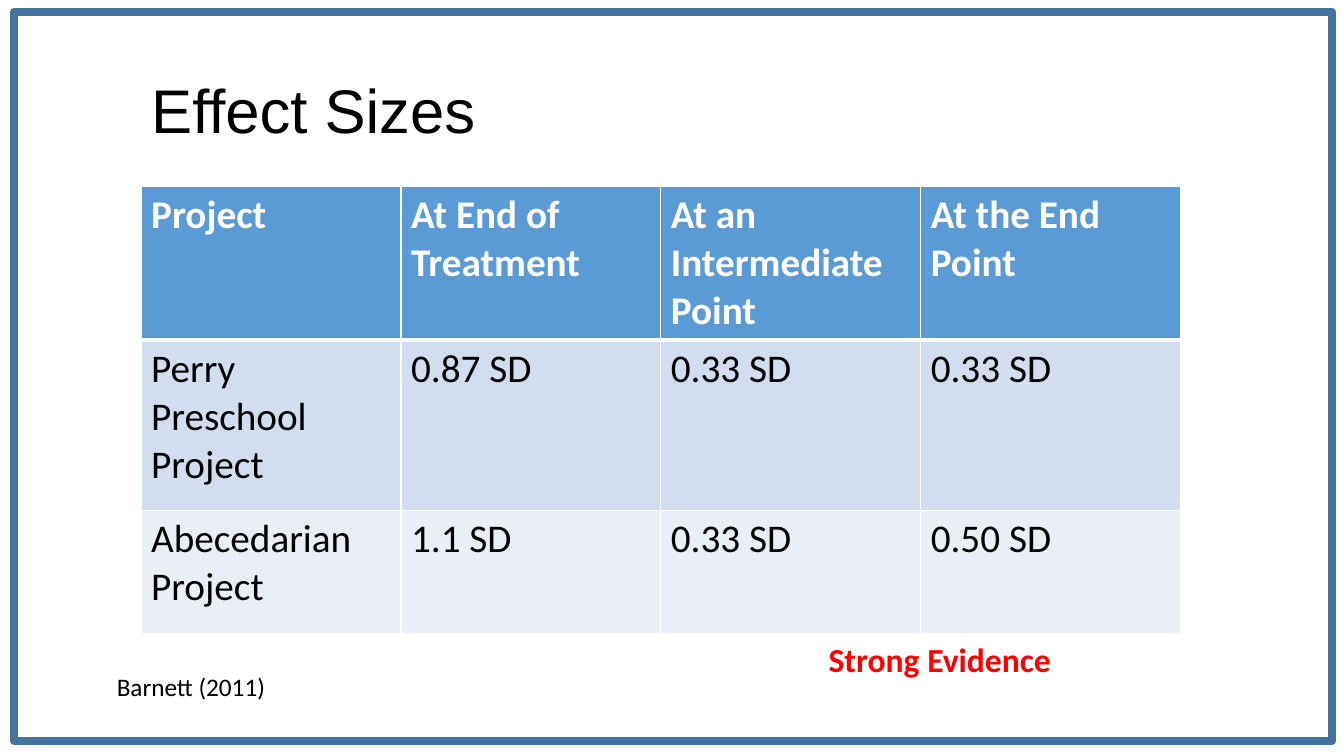
from dataclasses import dataclass

from lxml import etree
from pptx import Presentation
from pptx.dml.color import RGBColor
from pptx.enum.shapes import MSO_SHAPE
from pptx.enum.text import MSO_ANCHOR, MSO_AUTO_SIZE, PP_ALIGN
from pptx.oxml.ns import qn
from pptx.util import Inches, Pt

RECT = MSO_SHAPE.RECTANGLE
MIDDLE = MSO_ANCHOR.MIDDLE
LEFT = PP_ALIGN.LEFT
GROW = MSO_AUTO_SIZE.SHAPE_TO_FIT_TEXT
NO_FIT = MSO_AUTO_SIZE.NONE


@dataclass(frozen=True)
class Theme:
    frame: str = "43739E"
    header: str = "5B9BD5"
    bands: tuple = ("D2DEEF", "EAEFF7")
    white: str = "FFFFFF"
    black: str = "000000"
    red: str = "FF0000"
    heading_font: str = "Arial"
    body_font: str = "Calibri"
    title_size: int = 44
    table_size: int = 28
    label_size: int = 24
    source_size: int = 18


@dataclass(frozen=True)
class Label:
    text: str
    box: tuple
    size: int
    color: str
    bold: bool = False


THEME = Theme()
MARGIN, CONTENT_WIDTH = 1.4, 10.31
ROW_HEIGHTS = (1.29, 1.69, 1.22)
EFFECTS = (
    ("Project", "At End of Treatment", "At an Intermediate Point", "At the End Point"),
    ("Perry Preschool Project", "0.87 SD", "0.33 SD", "0.33 SD"),
    ("Abecedarian Project", "1.1 SD", "0.33 SD", "0.50 SD"),
)
LABELS = (
    Label("Barnett (2011)", (1.06, 6.61, 1.69, 0.4), THEME.source_size, THEME.black),
    Label("Strong Evidence", (8.12, 6.29, 2.43, 0.5), THEME.label_size, THEME.red, True),
)


def inches(*lengths: float) -> list:
    return [Inches(length) for length in lengths]


def write(tf, text: str, *, size: int, color: str, font: str = THEME.body_font,
          bold: bool = False, spacing: float = 1.0) -> None:
    p = tf.paragraphs[0]
    p.alignment = LEFT
    p.line_spacing = spacing
    r = p.add_run()
    r.text = text
    r.font.name = font
    r.font.size = Pt(size)
    r.font.bold = bold
    r.font.color.rgb = RGBColor.from_string(color)


def set_borders(cell, **widths: float) -> None:
    """Draw white cell borders, given in the order L, R, T, B."""
    tc_pr = cell._tc.get_or_add_tcPr()
    for i, (side, width) in enumerate(widths.items()):
        ln = etree.Element(qn(f"a:ln{side}"), w=str(Pt(width)))
        fill = etree.SubElement(ln, qn("a:solidFill"))
        etree.SubElement(fill, qn("a:srgbClr"), val=THEME.white)
        tc_pr.insert(i, ln)


def add_frame(s) -> None:
    sp = s.shapes.add_shape(RECT, *inches(0.14, 0.12, 13.07, 7.23))
    sp.shadow.inherit = False
    sp.fill.background()
    sp.line.color.rgb = RGBColor.from_string(THEME.frame)
    sp.line.width = Pt(6)


def add_title(s, text: str) -> None:
    sp = s.shapes.title
    sp.left, sp.top, sp.width, sp.height = inches(MARGIN, 0.4, CONTENT_WIDTH, 1.45)
    tf = sp.text_frame
    tf.vertical_anchor = MIDDLE
    tf.auto_size = NO_FIT
    write(tf, text, size=THEME.title_size, color=THEME.black,
          font=THEME.heading_font, spacing=0.9)


def add_effects_table(s) -> None:
    box = inches(MARGIN, 1.85, CONTENT_WIDTH, sum(ROW_HEIGHTS))
    table = s.shapes.add_table(len(EFFECTS), len(EFFECTS[0]), *box).table
    for row, height in zip(table.rows, ROW_HEIGHTS):
        row.height = Inches(height)
    for i, values in enumerate(EFFECTS):
        header = i == 0
        fill = THEME.header if header else THEME.bands[(i - 1) % 2]
        for j, value in enumerate(values):
            cell = table.cell(i, j)
            cell.fill.solid()
            cell.fill.fore_color.rgb = RGBColor.from_string(fill)
            # The rule below the header is heavier than the others
            set_borders(cell, L=1, R=1, T=3 if i == 1 else 1, B=3 if header else 1)
            write(cell.text_frame, value, size=THEME.table_size, bold=header,
                  color=THEME.white if header else THEME.black)


def add_label(s, label: Label) -> None:
    tf = s.shapes.add_textbox(*inches(*label.box)).text_frame
    tf.word_wrap = False
    tf.auto_size = GROW
    write(tf, label.text, size=label.size, color=label.color, bold=label.bold)


def main() -> None:
    prs = Presentation()
    prs.slide_width, prs.slide_height = inches(13.33, 7.5)
    s = prs.slides.add_slide(prs.slide_layouts.get_by_name("Title Only"))

    # Frame and title
    add_frame(s)
    add_title(s, "Effect Sizes")

    # Table with its source and verdict
    add_effects_table(s)
    for label in LABELS:
        add_label(s, label)

    prs.save("out.pptx")


if __name__ == "__main__":
    main()
